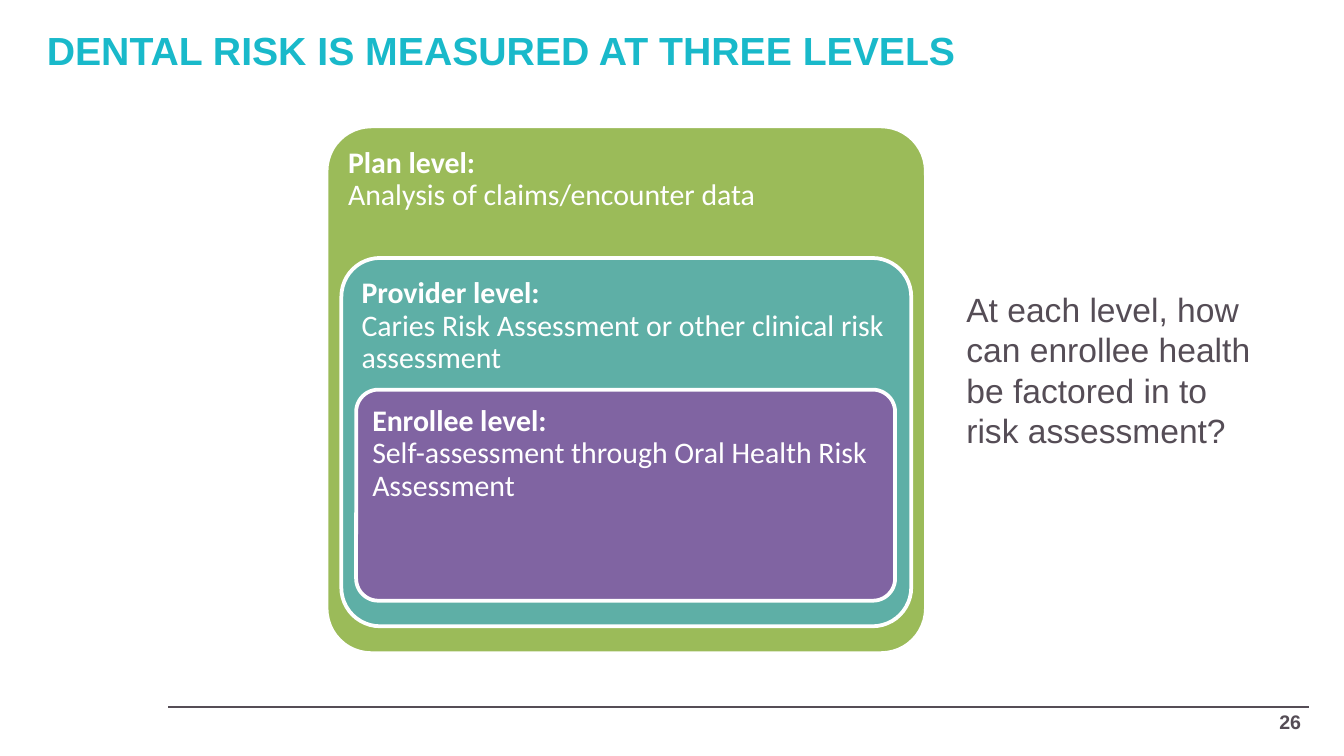
from dataclasses import dataclass

from lxml import etree
from pptx import Presentation
from pptx.dml.color import RGBColor
from pptx.enum import shapes, text
from pptx.oxml import ns
from pptx.util import Inches, Pt

TURQUOISE = RGBColor(0x19, 0xB9, 0xCA)
GRAY = RGBColor(0x55, 0x4D, 0x56)
GREEN = RGBColor(0x9B, 0xBB, 0x59)
TEAL = RGBColor(0x5E, 0xAF, 0xA6)
PURPLE = RGBColor(0x80, 0x64, 0xA2)
WHITE = RGBColor(0xFF, 0xFF, 0xFF)


@dataclass(frozen=True)
class Box:
    left: float
    top: float
    width: float
    height: float

    def lengths(self) -> list:
        return [Inches(v) for v in (self.left, self.top, self.width, self.height)]

    def inset(self, margin: float) -> "Box":
        return Box(self.left + margin, self.top + margin,
                   self.width - 2 * margin, self.height - 2 * margin)


@dataclass(frozen=True)
class Level:
    heading: str
    detail: str
    box: Box
    corner: float
    text_inset: float
    color: RGBColor


LEVELS = [
    Level("Plan level: ", "Analysis of claims/encounter data",
          Box(2.43, 0.94, 4.46, 3.92), 0.085, 0.09, GREEN),
    Level("Provider level: ",
          "Caries Risk Assessment or other clinical risk assessment",
          Box(2.54, 1.92, 4.24, 2.74), 0.105, 0.08, TEAL),
    Level("Enrollee level: ",
          "Self-assessment through Oral Health Risk Assessment",
          Box(2.65, 2.9, 4.01, 1.57), 0.105, 0.05, PURPLE),
]


def apply_format(target, values: dict) -> None:
    for name, value in values.items():
        setattr(target, name, value)


def add_run(paragraph, words: str, size: float, color: RGBColor,
            name: str = "Arial", bold: bool = False) -> None:
    run = paragraph.add_run()
    run.text = words
    apply_format(run.font, {"name": name, "size": Pt(size), "bold": bold})
    run.font.color.rgb = color


def add_text_box(slide, box: Box, side: float = 0.07, edge: float = 0.04,
                 anchor=text.MSO_ANCHOR.TOP):
    """Add a wrapping text box and return its first paragraph."""
    frame = slide.shapes.add_textbox(*box.lengths()).text_frame
    apply_format(frame, {
        "word_wrap": True,
        "vertical_anchor": anchor,
        "margin_left": Inches(side),
        "margin_right": Inches(side),
        "margin_top": Inches(edge),
        "margin_bottom": Inches(edge),
    })
    return frame.paragraphs[0]


def add_level(slide, level: Level) -> None:
    shape = slide.shapes.add_shape(shapes.MSO_SHAPE.ROUNDED_RECTANGLE,
                                   *level.box.lengths())
    shape.adjustments[0] = level.corner
    shape.shadow.inherit = False
    shape.fill.solid()
    shape.fill.fore_color.rgb = level.color
    shape.line.color.rgb = WHITE
    shape.line.width = Pt(2)

    paragraph = add_text_box(slide, level.box.inset(level.text_inset), edge=0.07)
    paragraph.line_spacing = 0.9
    add_run(paragraph, level.heading, 16, WHITE, "Calibri", bold=True)
    paragraph.add_line_break()
    add_run(paragraph, level.detail, 16, WHITE, "Calibri")


def add_footer(slide) -> None:
    rule = slide.shapes.add_connector(
        shapes.MSO_CONNECTOR.STRAIGHT,
        Inches(1.25), Inches(5.26), Inches(9.74), Inches(5.26))
    rule.line.color.rgb = GRAY
    rule.line.width = Pt(0.75)
    etree.SubElement(rule._element.spPr, ns.qn("a:effectLst"))

    number = add_text_box(slide, Box(8.95, 5.22, 0.8, 0.3),
                          anchor=text.MSO_ANCHOR.MIDDLE)
    number.alignment = text.PP_ALIGN.RIGHT
    add_run(number, "26", 10.5, GRAY, bold=True)


def main() -> None:
    presentation = Presentation()
    presentation.slide_width = Inches(10)
    presentation.slide_height = Inches(10 * 9 / 16)
    slide = presentation.slides.add_slide(presentation.slide_layouts[6])

    # Footer rule and page number
    add_footer(slide)

    # Title
    title = add_text_box(slide, Box(0.25, 0.15, 9.5, 0.69), side=0.1, edge=0.05)
    add_run(title, "DENTAL RISK IS MEASURED AT THREE LEVELS", 21, TURQUOISE,
            bold=True)

    # Nested levels, outermost first
    for level in LEVELS:
        add_level(slide, level)

    # Question beside the levels
    question = add_text_box(slide, Box(7.12, 2.11, 2.35, 3.02))
    add_run(question, "At each level, how can enrollee health be factored in "
            "to risk assessment?", 18, GRAY)

    presentation.save("out.pptx")


if __name__ == "__main__":
    main()
